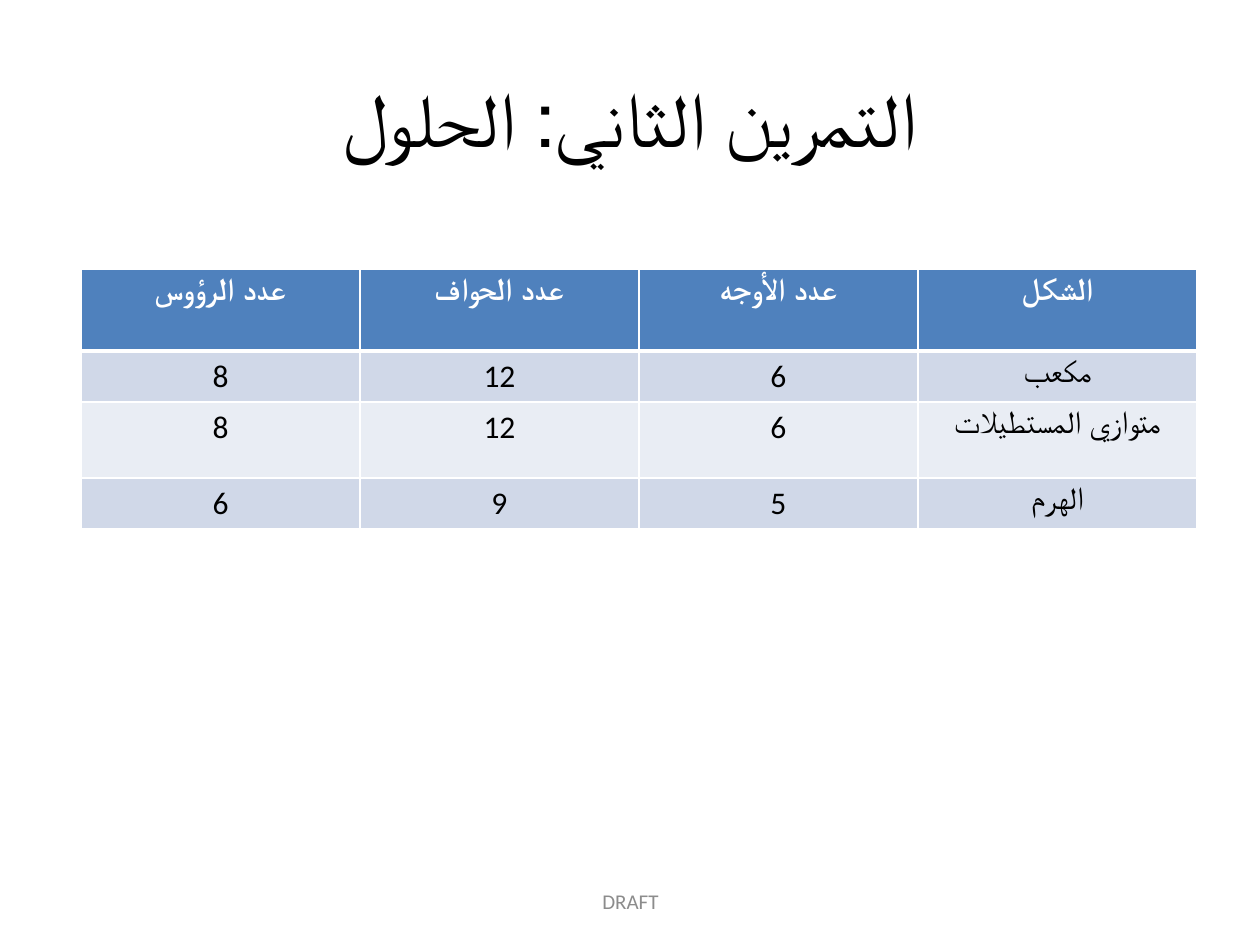
from lxml.etree import SubElement
from pptx import Presentation
from pptx.dml.color import RGBColor
from pptx.enum.text import MSO_ANCHOR, PP_ALIGN
from pptx.oxml.ns import qn
from pptx.util import Pt

PX = 914400 // 126
FONT = "Calibri"
WHITE, BLACK, GRAY = "FFFFFF", "000000", "8C8C8C"
HEADER_FILL = "4F81BD"
BAND_FILLS = ("D0D8E8", "E9EDF4")

TEXTS = [
    ("التمرين الثاني: الحلول", (63, 38, 1134, 157), 44, BLACK, True),
    ("DRAFT", (431, 876, 399, 50), 12, GRAY, False),
]
ROWS = [
    ("عدد الرؤوس", "عدد الحواف", "عدد الأوجه", "الشكل"),
    ("8", "12", "6", "مكعب"),
    ("8", "12", "6", "متوازي المستطيلات"),
    ("6", "9", "5", "الهرم"),
]
ROW_HEIGHTS = (82, 51, 76, 51)
COLUMN_WIDTH = 279
TABLE_LEFT, TABLE_TOP = 81, 269


def color(value):
    return RGBColor.from_string(value)


def set_text(text_frame, text, size, text_color, bold=False, rtl=False):
    text_frame.text = text
    paragraph = text_frame.paragraphs[0]
    paragraph.alignment = PP_ALIGN.CENTER
    if rtl:
        paragraph._p.get_or_add_pPr().set("rtl", "1")
    font = paragraph.runs[0].font
    font.name, font.size, font.bold = FONT, Pt(size), bold
    font.color.rgb = color(text_color)


def add_borders(cell, bottom_width):
    properties = cell._tc.get_or_add_tcPr()
    widths = {"a:lnL": 1, "a:lnR": 1, "a:lnT": 1, "a:lnB": bottom_width}
    for position, (tag, width) in enumerate(widths.items()):
        line = SubElement(properties, qn(tag), w=str(Pt(width)))
        fill = SubElement(line, qn("a:solidFill"))
        SubElement(fill, qn("a:srgbClr"), val=WHITE)
        properties.insert(position, line)


def add_text(slide, text, box, size, text_color, rtl):
    shape = slide.shapes.add_textbox(*(value * PX for value in box))
    shape.text_frame.word_wrap = True
    shape.text_frame.vertical_anchor = MSO_ANCHOR.MIDDLE
    set_text(shape.text_frame, text, size, text_color, rtl=rtl)


def add_solution_table(slide):
    column_count = len(ROWS[0])
    table = slide.shapes.add_table(
        len(ROWS), column_count, TABLE_LEFT * PX, TABLE_TOP * PX,
        column_count * COLUMN_WIDTH * PX, sum(ROW_HEIGHTS) * PX).table
    for column in table.columns:
        column.width = COLUMN_WIDTH * PX
    for row_index, (row, height) in enumerate(zip(ROWS, ROW_HEIGHTS)):
        table.rows[row_index].height = height * PX
        header = row_index == 0
        fill = HEADER_FILL if header else BAND_FILLS[(row_index - 1) % 2]
        for column_index, text in enumerate(row):
            cell = table.cell(row_index, column_index)
            set_text(cell.text_frame, text, 18, WHITE if header else BLACK,
                     bold=header, rtl=not text.isdigit())
            cell.fill.solid()
            cell.fill.fore_color.rgb = color(fill)
            add_borders(cell, 3 if header else 1)


def main():
    presentation = Presentation()
    presentation.slide_width, presentation.slide_height = 1260 * PX, 945 * PX
    slide = presentation.slides.add_slide(presentation.slide_layouts[6])
    for text in TEXTS:
        add_text(slide, *text)
    add_solution_table(slide)
    presentation.save("out.pptx")


if __name__ == "__main__":
    main()
